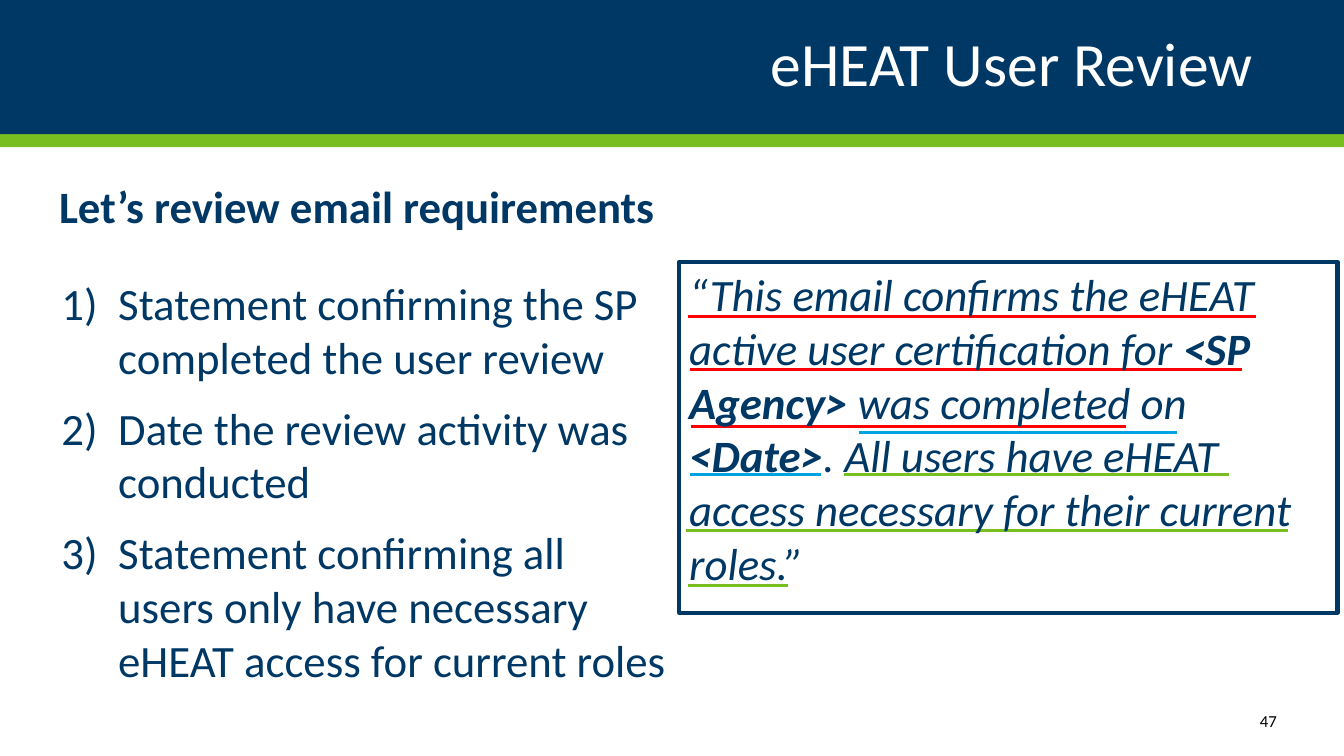
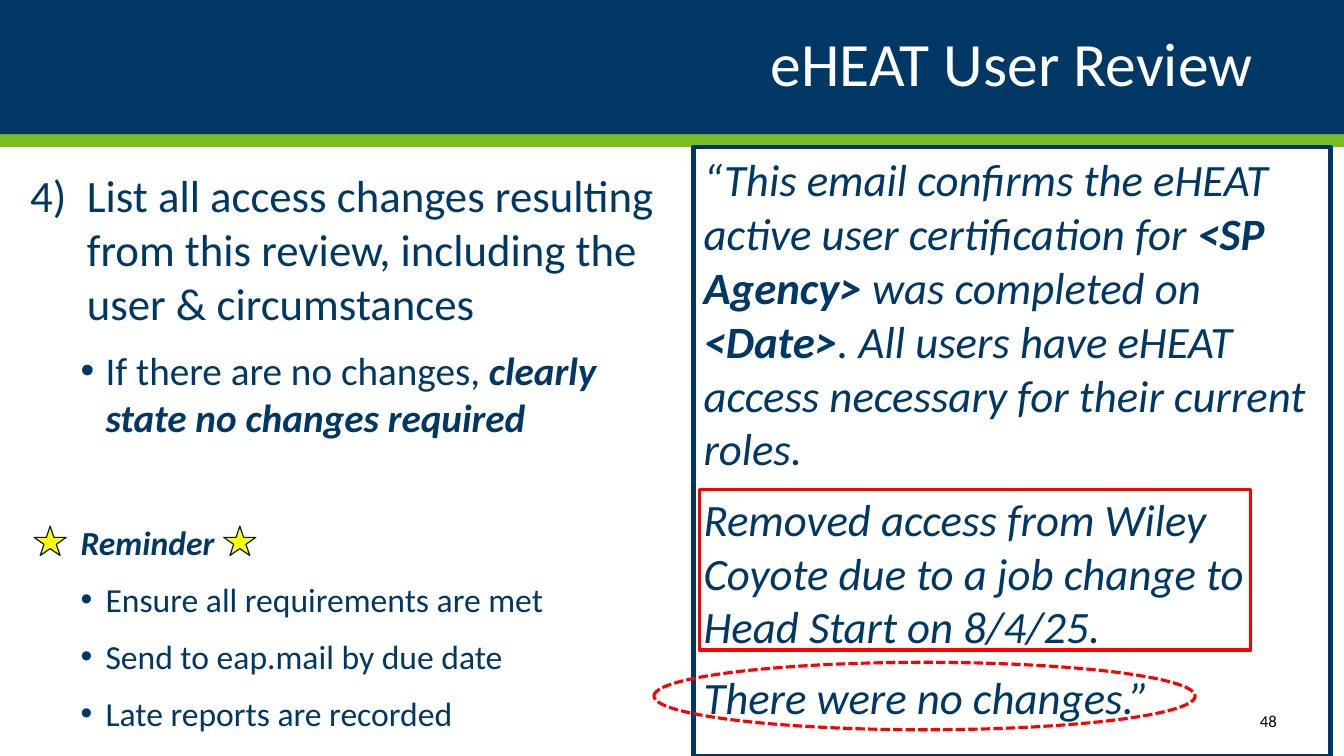
from lxml.etree import SubElement
from pptx import Presentation
from pptx.dml.color import RGBColor
from pptx.enum.dml import MSO_LINE
from pptx.enum.shapes import MSO_CONNECTOR, MSO_SHAPE
from pptx.enum.text import MSO_ANCHOR, PP_ALIGN
from pptx.oxml.ns import qn
from pptx.util import Cm, Pt

NAVY, GREEN, BLUE, RED = "003865", "78BE21", "00A3E2", "FF0000"
WHITE, BLACK, YELLOW, STAR_EDGE = "FFFFFF", "000000", "FFFF00", "00192C"
FONT = "Calibri"
WIDTH, HEIGHT, TITLE_H = 33.87, 19.05, 3.38

NUMBER = {"left": 1.43, "hang": 1.43, "level": 0}
BULLET = {"left": 1.9, "hang": 0.63, "level": 1}
BOLD = {"bold": True}


def add_shape(s, kind, box, fill=None, line=None, width=2.25):
    """Add a preset shape without shadow; box is left, top, width, height in cm."""
    sp = s.shapes.add_shape(kind, *(Cm(v) for v in box))
    sp.shadow.inherit = False
    if fill:
        sp.fill.solid()
        sp.fill.fore_color.rgb = RGBColor.from_string(fill)
    else:
        sp.fill.background()
    if line:
        sp.line.color.rgb = RGBColor.from_string(line)
        sp.line.width = Pt(width)
    else:
        sp.line.fill.background()
    return sp


def write(sp, paras, size=32, color=NAVY, align=PP_ALIGN.LEFT,
          anchor=MSO_ANCHOR.TOP, gap=6, **base):
    """Fill a shape; each paragraph is (layout dict, list of (text, font dict))."""
    tf = sp.text_frame
    tf.word_wrap = True
    tf.vertical_anchor = anchor
    for i, (layout, runs) in enumerate(paras):
        p = tf.paragraphs[0] if i == 0 else tf.add_paragraph()
        p.alignment = align
        p.level = layout.get("level", 0)
        pPr = p._p.get_or_add_pPr()
        if "left" in layout:
            pPr.set("marL", str(Cm(layout["left"])))
            pPr.set("indent", str(-Cm(layout.get("hang", 0))))
        if "hang" in layout:
            SubElement(SubElement(pPr, qn("a:buClr")), qn("a:srgbClr"), val=color)
            if layout["level"]:
                SubElement(pPr, qn("a:buFont"), typeface="Arial")
                SubElement(pPr, qn("a:buChar"), char="•")
            else:
                SubElement(pPr, qn("a:buFont"), typeface=FONT)
                SubElement(pPr, qn("a:buAutoNum"), type="arabicParenR",
                           startAt=str(layout.get("start", 1)))
        if i:
            p.space_before = Pt(layout.get("before", gap))
        p.space_after = Pt(gap)
        for text, fmt in runs:
            r = p.add_run()
            r.text = text
            r.font.color.rgb = RGBColor.from_string(color)
            font = {"name": FONT, "size": size, **base, **fmt}
            font["size"] = Pt(font["size"])
            for key, value in font.items():
                setattr(r.font, key, value)


prs = Presentation()
prs.slide_width, prs.slide_height = Cm(WIDTH), Cm(HEIGHT)

# Title band, accent stripe and page number on every slide
slides = []
for number in (47, 48):
    s = prs.slides.add_slide(prs.slide_layouts[6])
    add_shape(s, MSO_SHAPE.RECTANGLE, (0, TITLE_H, WIDTH, 0.33), GREEN)
    title = add_shape(s, MSO_SHAPE.RECTANGLE, (0, 0, WIDTH, TITLE_H), NAVY)
    write(title, [({}, [("eHEAT User Review", {})])], 44, WHITE,
          PP_ALIGN.RIGHT, MSO_ANCHOR.MIDDLE, gap=0)
    tf = title.text_frame
    tf.margin_left = tf.margin_right = Cm(2.29)
    tf.paragraphs[0].line_spacing = 0.9
    page = s.shapes.add_textbox(Cm(28.37), Cm(17.65), Cm(4.06), Cm(1.02))
    write(page, [({}, [(str(number), {})])], 12, BLACK,
          PP_ALIGN.RIGHT, MSO_ANCHOR.MIDDLE, gap=0)
    slides.append(s)
requirements, changes = slides

email = [
    ("“This email confirms the eHEAT active user certification for ", {}),
    ("<SP Agency>", BOLD),
    (" was completed on ", {}),
    ("<Date>", BOLD),
]
email_end = ". All users have eHEAT access necessary for their current roles."

# Slide 47: email requirements
s = requirements
sp = add_shape(s, MSO_SHAPE.RECTANGLE, (1.24, 4.39, 30.38, 1.98))
write(sp, [({}, [("Let’s review email requirements", BOLD)])])

sp = add_shape(s, MSO_SHAPE.RECTANGLE, (1.3, 6.83, 15.8, 10.72))
write(sp, [(NUMBER, [(text, {})]) for text in (
    "Statement confirming the SP completed the user review",
    "Date the review activity was conducted",
    "Statement confirming all users only have necessary eHEAT access for current roles",
)])

underlines = [
    (RED, 17.35, 31.65, 7.98),
    (RED, 17.4, 31.29, 9.3),
    (RED, 17.42, 28.37, 10.74),
    (BLUE, 21.64, 29.67, 10.9),
    (BLUE, 17.4, 20.68, 11.96),
    (GREEN, 21.26, 30.96, 11.96),
    (GREEN, 17.3, 32.46, 13.36),
    (GREEN, 17.35, 19.86, 14.76),
]
for color, left, right, y in underlines:
    line = s.shapes.add_connector(MSO_CONNECTOR.STRAIGHT, Cm(left), Cm(y), Cm(right), Cm(y))
    line.line.color.rgb = RGBColor.from_string(color)
    line.line.width = Pt(2.25)
    SubElement(line._element.spPr, qn("a:effectLst"))

sp = add_shape(s, MSO_SHAPE.RECTANGLE, (17.12, 6.6, 16.59, 8.84), line=NAVY, width=3)
write(sp, [({}, email + [(email_end + "”", {})])], italic=True)

# Slide 48: access changes and reminder
s = changes
sp = add_shape(s, MSO_SHAPE.RECTANGLE, (17.48, 3.71, 16.05, 15.34), line=NAVY, width=3)
write(sp, [
    ({}, email + [(email_end, {})]),
    ({}, [("Removed access from Wiley Coyote due to a job change to Head Start on 8/4/25.", {})]),
    ({}, [("There were no changes.”", {})]),
], italic=True)

strong = {"bold": True, "italic": True}
sp = add_shape(s, MSO_SHAPE.RECTANGLE, (0.51, 4.11, 16.41, 14.55))
write(sp, [
    ({**NUMBER, "start": 4}, [
        ("List all access changes resulting from this review, "
         "including the user & circumstances", {})]),
    (BULLET, [("If there are no changes, ", {"size": 28}),
              ("clearly state no changes required", {"size": 28, **strong})]),
    ({"left": 1.27, "level": 1, "before": 52}, [("Reminder", {"size": 24, **strong})]),
] + [(BULLET, [(text, {"size": 24})]) for text in (
    "Ensure all requirements are met",
    "Send to eap.mail by due date",
    "Late reports are recorded",
)])

add_shape(s, MSO_SHAPE.RECTANGLE, (17.63, 12.34, 13.89, 4.04), line=RED)
oval = add_shape(s, MSO_SHAPE.OVAL, (16.48, 16.69, 13.64, 1.7), line=RED)
oval.line.dash_style = MSO_LINE.SQUARE_DOT
for left in (0.86, 5.64):
    add_shape(s, MSO_SHAPE.STAR_5_POINT, (left, 13.26, 0.81, 0.74), YELLOW, STAR_EDGE, 0.85)

prs.save("out.pptx")
